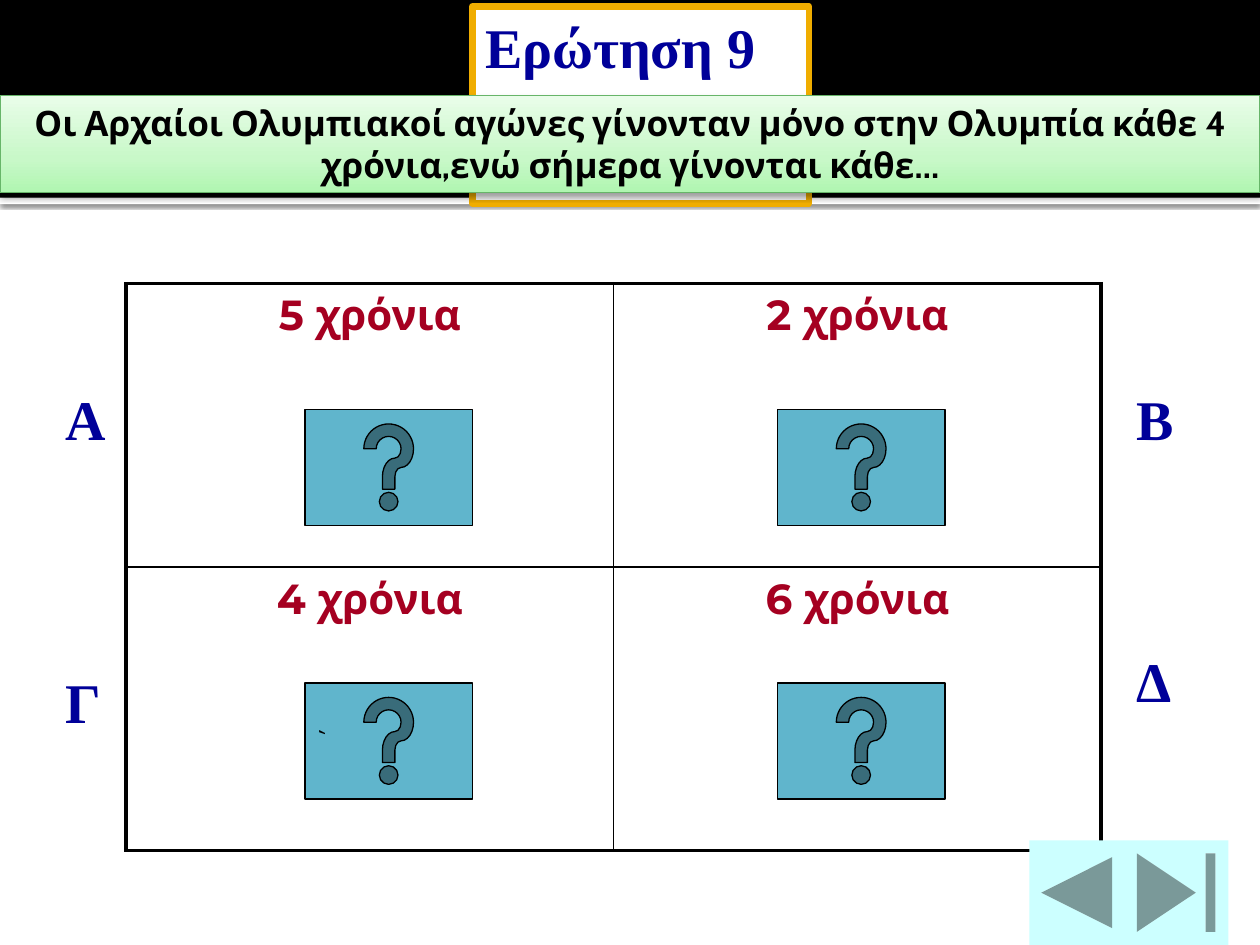
from dataclasses import dataclass

from pptx import Presentation
from pptx.dml.color import RGBColor
from pptx.enum.shapes import MSO_SHAPE
from pptx.enum.text import MSO_ANCHOR, MSO_AUTO_SIZE, PP_ALIGN
from pptx.oxml import parse_xml
from pptx.oxml.ns import nsdecls
from pptx.util import Inches, Pt

RECT = MSO_SHAPE.RECTANGLE
HELP = MSO_SHAPE.ACTION_BUTTON_HELP
END = MSO_SHAPE.ACTION_BUTTON_END
BACK = MSO_SHAPE.ACTION_BUTTON_BACK_OR_PREVIOUS
LEFT, CENTER = PP_ALIGN.LEFT, PP_ALIGN.CENTER
TOP, MIDDLE = MSO_ANCHOR.TOP, MSO_ANCHOR.MIDDLE
GROW = MSO_AUTO_SIZE.SHAPE_TO_FIT_TEXT


@dataclass(frozen=True)
class Theme:
    black: str = "000000"
    white: str = "FFFFFF"
    navy: str = "000099"
    crimson: str = "A50021"
    gold: str = "F0AD00"
    teal: str = "60B5CC"
    aqua: str = "CCFFFF"
    green_line: str = "67B569"
    green_stops: tuple = ((0, "B0F6B1"), (35, "C8F8C8"), (100, "E9FDE9"))
    heading_font: str = "Times New Roman"
    body_font: str = "Cabin"
    answer_font: str = "Montserrat"
    heading_size: float = 32
    answer_size: float = 24
    question_size: float = 20
    small_size: float = 18


class QuizSlide:
    """Holds the theme and the slide being built."""

    def __init__(self, slide, theme):
        self.slide = slide
        self.theme = theme

    def add_text(self, tf, text, font, size, color, bold=True, align=LEFT, anchor=TOP):
        tf.vertical_anchor = anchor
        p = tf.paragraphs[0]
        p.alignment = align
        r = p.add_run()
        r.text = text
        r.font.name = font
        r.font.size = Pt(size)
        r.font.bold = bold
        r.font.color.rgb = RGBColor.from_string(color)

    def heading(self, tf, text):
        t = self.theme
        tf.word_wrap = True
        tf.auto_size = GROW
        self.add_text(tf, text, t.heading_font, t.heading_size, t.navy)

    def paint(self, sp, fill, line=None, width=0.75):
        sp.fill.solid()
        sp.fill.fore_color.rgb = RGBColor.from_string(fill)
        if line:
            sp.line.color.rgb = RGBColor.from_string(line)
            sp.line.width = Pt(width)
        else:
            sp.line.fill.background()

    def shape(self, kind, x, y, w, h, fill, line=None, width=0.75):
        sp = self.slide.shapes.add_shape(kind, Inches(x), Inches(y), Inches(w), Inches(h))
        sp.shadow.inherit = False
        self.paint(sp, fill, line, width)
        return sp

    def shadow(self, sp, opacity, blur, distance):
        """Drop a black shadow straight down; blur and distance in points."""
        effects = sp._element.spPr.find("{*}effectLst")
        effects.append(parse_xml(
            f'<a:outerShdw {nsdecls("a")} blurRad="{Pt(blur)}" dist="{Pt(distance)}" '
            f'dir="5400000" rotWithShape="0"><a:srgbClr val="{self.theme.black}">'
            f'<a:alpha val="{opacity * 1000}"/></a:srgbClr></a:outerShdw>'))

    def gradient(self, sp, stops):
        """Fill from the bottom upwards with (percent, colour) stops."""
        sp.fill.gradient()
        sp.fill.gradient_angle = 90
        gs_list = sp._element.spPr.find("{*}gradFill/{*}gsLst")
        for gs in list(gs_list):
            gs_list.remove(gs)
        for percent, color in stops:
            gs_list.append(parse_xml(
                f'<a:gs {nsdecls("a")} pos="{percent * 1000}"><a:srgbClr val="{color}"/></a:gs>'))

    def title(self, text, x, y, w, h):
        t = self.theme
        sp = self.slide.shapes.title
        sp.left, sp.top, sp.width, sp.height = map(Inches, (x, y, w, h))
        self.paint(sp, t.white, t.gold, 3.78)
        self.heading(sp.text_frame, text)
        self.slide.shapes._spTree.append(sp._element)  # bring in front of the band

    def label(self, text, x, y):
        box = self.slide.shapes.add_textbox(Inches(x), Inches(y), Inches(0.5), Inches(0.63))
        self.heading(box.text_frame, text)

    def borders(self, cell, widths):
        """Set black borders, widths in points by side (L, R, T, B)."""
        tc_pr = cell._tc.get_or_add_tcPr()
        for side, width in widths.items():
            tc_pr.append(parse_xml(
                f'<a:ln{side} {nsdecls("a")} w="{Pt(width)}"><a:solidFill>'
                f'<a:srgbClr val="{self.theme.black}"/></a:solidFill></a:ln{side}>'))

    def answers(self, rows, x, y, w, h):
        t = self.theme
        n_rows, n_cols = len(rows), len(rows[0])
        table = self.slide.shapes.add_table(
            n_rows, n_cols, Inches(x), Inches(y), Inches(w), Inches(h)).table
        table.first_row = table.horz_banding = False
        outer, inner = 2.25, 1
        for i, row in enumerate(rows):
            for j, text in enumerate(row):
                cell = table.cell(i, j)
                self.borders(cell, {
                    "L": outer if j == 0 else inner,
                    "R": outer if j == n_cols - 1 else inner,
                    "T": outer if i == 0 else inner,
                    "B": outer if i == n_rows - 1 else inner})
                cell.fill.solid()
                cell.fill.fore_color.rgb = RGBColor.from_string(t.white)
                self.add_text(cell.text_frame, text, t.answer_font, t.answer_size,
                              t.crimson, align=CENTER)

    def help_button(self, x, y):
        return self.shape(HELP, x, y, 1.33, 0.92, self.theme.teal, self.theme.black)

    def question(self, text, x, y, w, h):
        t = self.theme
        sp = self.shape(RECT, x, y, w, h, t.white, t.green_line, 0.5)
        self.gradient(sp, t.green_stops)
        self.shadow(sp, 38, 3.5, 2)
        tf = sp.text_frame
        tf.word_wrap = True
        tf.auto_size = GROW
        self.add_text(tf, text, t.body_font, t.question_size, t.black, align=CENTER)


def main():
    theme = Theme()
    prs = Presentation()
    prs.slide_width, prs.slide_height = Inches(10), Inches(7.5)
    s = QuizSlide(prs.slides.add_slide(prs.slide_layouts[5]), theme)

    strip = s.shape(RECT, 0, 1.57, 10, 0.05, theme.white)
    s.shadow(strip, 60, 2.5, 0.8)
    s.shape(RECT, 0, 0, 10, 1.57, theme.black)

    s.answers([["5 χρόνια", "2 χρόνια"], ["4 χρόνια", "6 χρόνια"]], 1, 2.25, 7.74, 4.5)
    for letter, x, y in (("Α", 0.42, 3), ("Γ", 0.42, 5.25), ("Β", 8.92, 3), ("Δ", 8.92, 5.08)):
        s.label(letter, x, y)
    s.title("Ερώτηση 9", 3.75, 0.05, 2.67, 0.63)

    buttons = {(x, y): s.help_button(x, y) for y in (3.25, 5.42) for x in (2.42, 6.17)}
    tf = buttons[2.42, 5.42].text_frame
    tf.word_wrap = False
    s.add_text(tf, "`", theme.body_font, theme.small_size, theme.black, bold=False, anchor=MIDDLE)

    s.shape(END, 8.92, 6.67, 0.83, 0.83, theme.aqua)
    s.shape(BACK, 8.17, 6.67, 0.75, 0.83, theme.aqua)

    s.question("Οι Αρχαίοι Ολυμπιακοί αγώνες γίνονταν μόνο στην Ολυμπία κάθε 4 "
               "χρόνια,ενώ σήμερα γίνονται κάθε…", 0, 0.76, 10, 0.77)
    prs.save("out.pptx")


if __name__ == "__main__":
    main()
